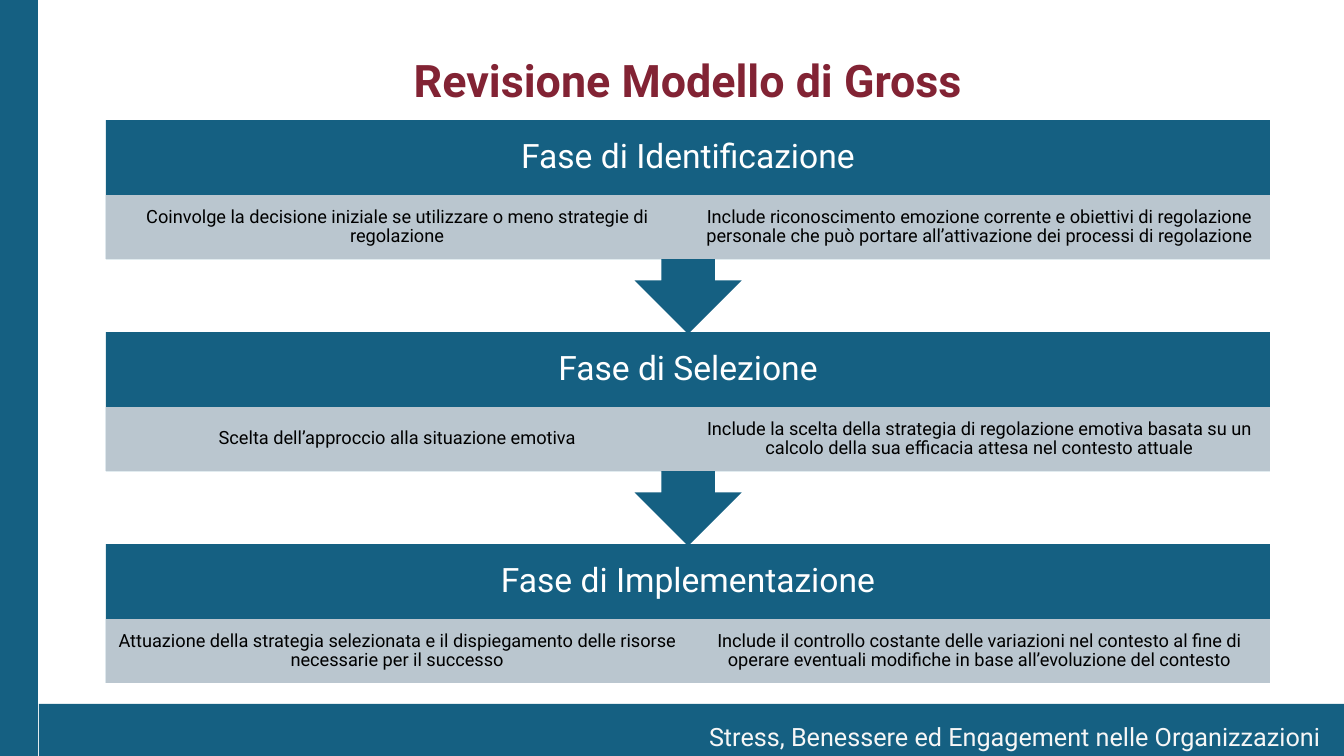
import pptx
import pptx.util
import pptx.dml.color
import pptx.enum.shapes
import pptx.enum.text
import pptx.oxml.ns
from dataclasses import dataclass
from lxml import etree

SHAPE = pptx.enum.shapes.MSO_SHAPE
ALIGN = pptx.enum.text.PP_ALIGN
ANCHOR = pptx.enum.text.MSO_ANCHOR
SCALE = 914400 / 100.8


@dataclass(frozen=True)
class Theme:
    font: str = "Roboto"
    blue: str = "156082"
    red: str = "822334"
    grey: str = "CCD2D8"
    white: str = "FFFFFF"
    pale: str = "F6F6F6"
    black: str = "000000"
    title: int = 32
    phase: int = 24
    footer: int = 18
    detail: int = 13


THEME = Theme()

PHASES = [
    ("Fase di Identificazione",
     ["Coinvolge la decisione iniziale se utilizzare o meno strategie di regolazione",
      "Include riconoscimento emozione corrente e obiettivi di regolazione personale "
      "che può portare all’attivazione dei processi di regolazione"]),
    ("Fase di Selezione",
     ["Scelta dell’approccio alla situazione emotiva",
      "Include la scelta della strategia di regolazione emotiva basata su un calcolo "
      "della sua efficacia attesa nel contesto attuale"]),
    ("Fase di Implementazione",
     ["Attuazione della strategia selezionata e il dispiegamento delle risorse "
      "necessarie per il successo",
      "Include il controllo costante delle variazioni nel contesto al fine di operare "
      "eventuali modifiche in base all’evoluzione del contesto"]),
]


def px(n):
    return pptx.util.Emu(round(n * SCALE))


def rgb(color):
    return pptx.dml.color.RGBColor.from_string(color)


def apply(obj, values):
    for name, value in values.items():
        setattr(obj, name, value)


def add_block(slide, box, color, kind=SHAPE.RECTANGLE, opacity=100):
    s = slide.shapes.add_shape(kind, *map(px, box))
    s.shadow.inherit = False
    s.fill.solid()
    s.fill.fore_color.rgb = rgb(color)
    s.line.fill.background()
    if opacity < 100:
        qn = pptx.oxml.ns.qn
        clr = s.element.spPr.find(qn("a:solidFill")).find(qn("a:srgbClr"))
        etree.SubElement(clr, qn("a:alpha"), val=str(opacity * 1000))
    return s


def add_label(slide, box):
    return slide.shapes.add_textbox(*map(px, box))


def write(s, text, size, color, inset=(10, 5), bold=False, wrap=True,
          align=ALIGN.CENTER, anchor=ANCHOR.MIDDLE, spacing=0.9):
    tf = s.text_frame
    x, y = map(px, inset)
    apply(tf, {"word_wrap": wrap, "vertical_anchor": anchor, "margin_left": x,
               "margin_right": x, "margin_top": y, "margin_bottom": y})
    p = tf.paragraphs[0]
    apply(p, {"alignment": align, "line_spacing": spacing})
    r = p.add_run()
    r.text = text
    apply(r.font, {"name": THEME.font, "size": pptx.util.Pt(size), "bold": bold})
    r.font.color.rgb = rgb(color)


def add_frame(slide, box):
    x, y, w, h = box
    side, bar = 38, 52
    add_block(slide, (x, y, side, h), THEME.blue)
    add_block(slide, (x + side + 1, y + h - bar, w - side - 1, bar), THEME.blue)
    s = add_label(slide, (x + w - 645, y + h - 40, 645, 40))
    write(s, "Stress, Benessere ed Engagement nelle Organizzazioni", THEME.footer,
          THEME.pale, wrap=False, align=ALIGN.LEFT, anchor=ANCHOR.TOP, spacing=1.0)


def add_title(slide, box):
    write(add_label(slide, box), "Revisione Modello di Gross", THEME.title,
          THEME.red, bold=True)


def add_phase(slide, box, name, details, callout_h=None):
    x, y, w, h = box
    head = 75
    if callout_h:
        s = add_block(slide, (x, y, w, callout_h), THEME.blue, SHAPE.UP_ARROW_CALLOUT)
        s.rotation = 180
    else:
        add_block(slide, box, THEME.blue)
    write(add_label(slide, (x, y, w, head)), name, THEME.phase, THEME.white,
          inset=(19, 19))
    cell_w = w // len(details)
    for i, detail in enumerate(details):
        s = add_block(slide, (x + i * cell_w, y + head, cell_w, h - head),
                      THEME.grey, opacity=90)
        write(s, detail, THEME.detail, THEME.black, inset=(10, 2))


def add_process(slide, box):
    x, y, w, h = box
    body = 139
    last = len(PHASES) - 1
    step = (h - body) // last
    for i, (name, details) in reversed(list(enumerate(PHASES))):
        add_phase(slide, (x, y + i * step, w, body), name, details,
                  callout_h=step + 2 if i < last else None)


def main():
    prs = pptx.Presentation()
    apply(prs, {"slide_width": px(1344), "slide_height": px(756)})
    slide = prs.slides.add_slide(prs.slide_layouts[6])
    add_frame(slide, (0, 0, 1344, 756))
    add_title(slide, (218, 10, 940, 146))
    add_process(slide, (106, 120, 1164, 563))
    prs.save("out.pptx")


if __name__ == "__main__":
    main()
